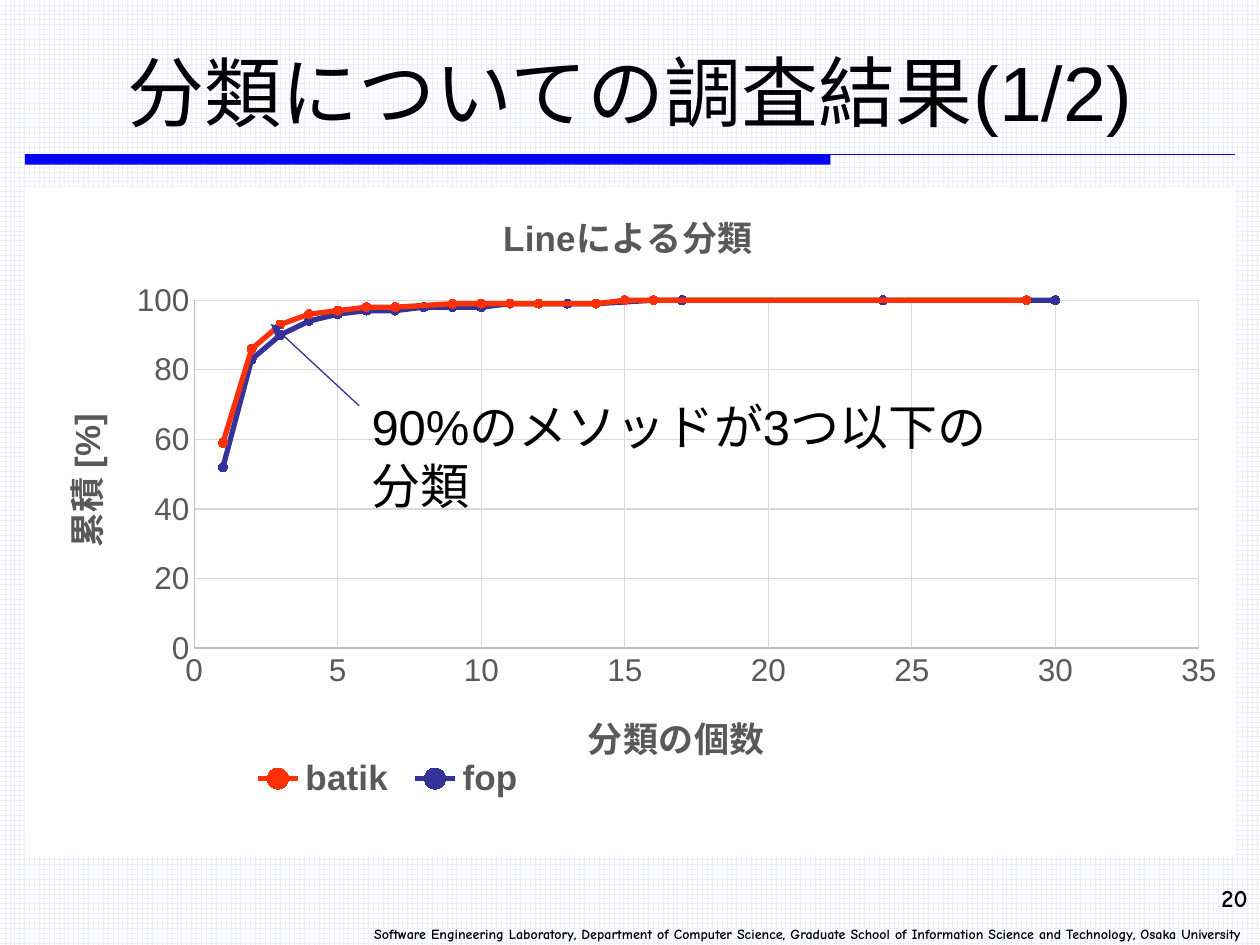
from lxml.etree import SubElement
from pptx import Presentation
from pptx.chart.data import XyChartData
from pptx.dml.color import RGBColor
from pptx.enum.chart import XL_CHART_TYPE, XL_LEGEND_POSITION, XL_MARKER_STYLE, XL_TICK_MARK
from pptx.enum.dml import MSO_PATTERN
from pptx.enum.shapes import MSO_CONNECTOR, MSO_SHAPE
from pptx.enum.text import MSO_ANCHOR, PP_ALIGN
from pptx.oxml import parse_xml
from pptx.oxml.ns import nsdecls, qn
from pptx.util import Cm, Pt

BLUE, NAVY, RED, GRAY = "0000FF", "333399", "FD3007", "595959"
BATIK = [(1, 59), (2, 86), (3, 93), (4, 96), (5, 97), (6, 98), (7, 98), (9, 99),
         (10, 99), (11, 99), (12, 99), (14, 99), (15, 100), (16, 100), (29, 100)]
FOP = [(1, 52), (2, 83), (3, 90), (4, 94), (5, 96), (6, 97), (7, 97), (8, 98), (9, 98),
       (10, 98), (11, 99), (12, 99), (13, 99), (14, 99), (16, 100), (17, 100), (24, 100),
       (30, 100)]


def rgb(value):
    return RGBColor.from_string(value)


def style_font(font, size, color, bold=False, name="Arial"):
    font.name, font.size, font.bold = name, Pt(size), bold
    font.color.rgb = rgb(color)


def style_line(line, color, width=0.75):
    line.color.rgb = rgb(color)
    line.width = Pt(width)


def set_background(s):
    fill = s.background.fill
    fill.patterned()
    fill.pattern = MSO_PATTERN.LARGE_GRID
    fill.fore_color.rgb = rgb("EDEDFF")
    fill.back_color.rgb = rgb("FFFFFF")


def add_text(s, box, text, size, align=PP_ALIGN.LEFT, anchor=MSO_ANCHOR.TOP,
             name="Arial", bold=False, wrap=True):
    tf = s.shapes.add_textbox(*map(Cm, box)).text_frame
    tf.word_wrap = wrap
    tf.vertical_anchor = anchor
    tf.text = text
    p = tf.paragraphs[0]
    p.alignment = align
    style_font(p.runs[0].font, size, "000000", bold, name)


def add_line(s, start, end, color, arrow=False):
    sp = s.shapes.add_connector(MSO_CONNECTOR.STRAIGHT, *map(Cm, start + end))
    style_line(sp.line, color)
    if arrow:
        SubElement(sp.line._get_or_add_ln(), qn("a:tailEnd"), type="triangle")
    SubElement(sp._element.spPr, qn("a:effectLst"))


def add_bar(s, box, color):
    sp = s.shapes.add_shape(MSO_SHAPE.RECTANGLE, *map(Cm, box))
    sp.shadow.inherit = False
    sp.fill.solid()
    sp.fill.fore_color.rgb = rgb(color)
    sp.line.fill.background()


def place(element, inner=False, **fractions):
    target = '<c:layoutTarget val="inner"/>' if inner else ""
    modes = "".join(f'<c:{k}Mode val="edge"/>' for k in "xy")
    sizes = "".join(f'<c:{k} val="{v}"/>' for k, v in fractions.items())
    layout = parse_xml(f'<c:layout {nsdecls("c")}><c:manualLayout>{target}{modes}{sizes}'
                       '</c:manualLayout></c:layout>')
    for old in element.findall(qn("c:layout")):
        element.remove(old)
    before = element.find(qn("c:tx"))
    if before is None:
        before = element.find(qn("c:legendPos"))
    if before is None:
        element.insert(0, layout)
    else:
        before.addnext(layout)


def set_title(title, text, x, y):
    tf = title.text_frame
    tf.text = text
    style_font(tf.paragraphs[0].runs[0].font, 20, GRAY, True)
    place(title._element, x=x, y=y)


def style_axis(axis, title, x, y, maximum, step):
    axis.minimum_scale, axis.maximum_scale, axis.major_unit = 0, maximum, step
    axis.major_tick_mark = axis.minor_tick_mark = XL_TICK_MARK.NONE
    axis.has_major_gridlines = True
    style_line(axis.major_gridlines.format.line, "D9D9D9")
    style_line(axis.format.line, "BFBFBF")
    style_font(axis.tick_labels.font, 18, GRAY)
    axis.tick_labels.number_format = "General"
    axis.tick_labels.number_format_is_linked = False
    set_title(axis.axis_title, title, x, y)


def style_series(series, color):
    series.smooth = False
    style_line(series.format.line, color, 3)
    marker = series.marker
    marker.style, marker.size = XL_MARKER_STYLE.CIRCLE, 5
    marker.format.fill.solid()
    marker.format.fill.fore_color.rgb = rgb(color)
    style_line(marker.format.line, color)


def scatter_data():
    data = XyChartData()
    for name, points in (("batik", BATIK), ("fop", FOP)):
        series = data.add_series(name)
        padding = [(None, None)] * (len(FOP) - len(points))
        for x, y in points + padding:
            series.add_data_point(x, y)
    return data


def add_scatter(s, box):
    chart = s.shapes.add_chart(XL_CHART_TYPE.XY_SCATTER_LINES, *map(Cm, box),
                               scatter_data()).chart
    style_font(chart.font, 10, "000000")
    chart.plots[0].vary_by_categories = False
    for series, color in zip(chart.plots[0].series, (RED, NAVY)):
        style_series(series, color)
    chart.has_title = True
    set_title(chart.chart_title, "Lineによる分類", 0.39, 0.02)
    style_axis(chart.category_axis, "分類の個数", 0.46, 0.77, 35, 5)
    style_axis(chart.value_axis, "累積 [%]", 0.02, 0.33, 100, 20)
    chart.has_legend = True
    legend = chart.legend
    legend.position = XL_LEGEND_POSITION.BOTTOM
    legend.include_in_layout = False
    style_font(legend.font, 20, GRAY, True)
    place(legend._element, x=0.18, y=0.85, w=0.24, h=0.07)
    place(chart._chartSpace.chart.plotArea, True, x=0.14, y=0.17, w=0.83, h=0.52)
    fill = parse_xml(f'<c:spPr {nsdecls("c", "a")}><a:solidFill><a:srgbClr val="FFFFFF"/>'
                     '</a:solidFill><a:ln><a:noFill/></a:ln></c:spPr>')
    chart._chartSpace.chart.addnext(fill)


def main():
    prs = Presentation()
    prs.slide_width, prs.slide_height = Cm(25.4), Cm(19.05)
    s = prs.slides.add_slide(prs.slide_layouts[6])
    set_background(s)
    add_bar(s, (0.5, 3.12, 16.24, 0.2), BLUE)
    add_line(s, (0.5, 3.12), (24.9, 3.12), BLUE)
    add_text(s, (24.1, 17.68, 1.3, 0.71), "20", 14, PP_ALIGN.RIGHT,
             name="Comic Neue", bold=True)
    add_text(s, (4.8, 18.54, 20.5, 0.58),
             "Software Engineering Laboratory, Department of Computer Science, "
             "Graduate School of Information Science and Technology, Osaka University",
             8, PP_ALIGN.RIGHT, name="Comic Neue", bold=True, wrap=False)
    add_text(s, (0.5, 0.53, 24.4, 2.59), "分類についての調査結果(1/2)", 44,
             PP_ALIGN.CENTER, MSO_ANCHOR.MIDDLE)
    add_scatter(s, (0.5, 3.76, 24.4, 13.49))
    add_line(s, (7.24, 8.18), (5.46, 6.53), NAVY, arrow=True)
    add_text(s, (7.24, 7.87, 13.06, 2.64), "90%のメソッドが3つ以下の分類", 28)
    prs.save("out.pptx")


if __name__ == "__main__":
    main()
